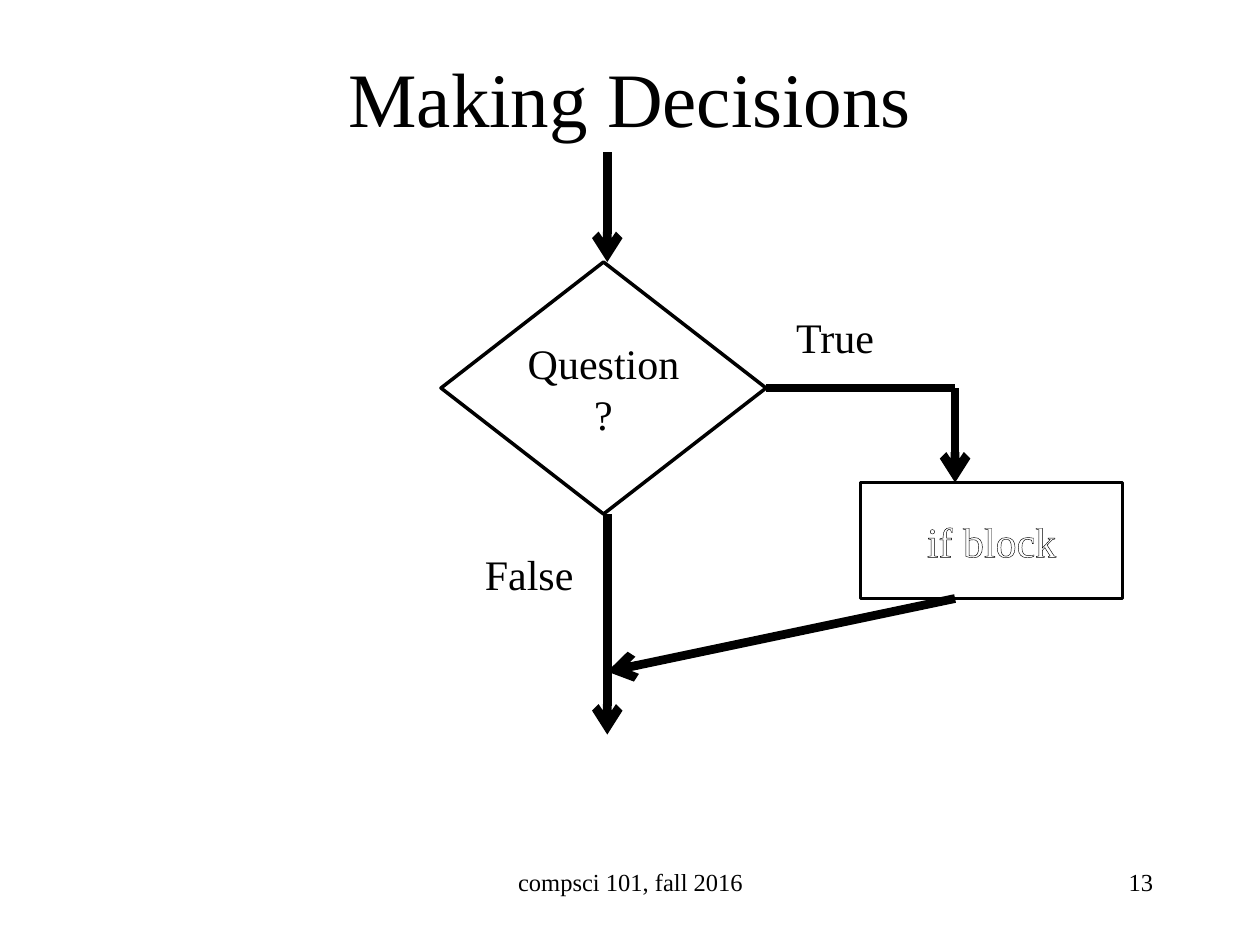
"""Build the Making Decisions flowchart slide."""
from lxml.etree import SubElement
from pptx import Presentation
from pptx.dml.color import RGBColor
from pptx.enum.shapes import MSO_CONNECTOR as CONN, MSO_SHAPE as SHAPE
from pptx.enum.text import MSO_ANCHOR as ANCHOR, PP_ALIGN as ALIGN
from pptx.oxml import parse_xml
from pptx.oxml.ns import nsdecls, qn
from pptx.util import Inches, Pt


def color(value):
    """Turn a hex string into a colour."""
    return RGBColor.from_string(value)


def write(s, text, size, align, fill="000000", wrap=True, anchor=ANCHOR.TOP):
    """Put one formatted paragraph into a shape."""
    tf = s.text_frame
    tf.word_wrap = wrap
    tf.vertical_anchor = anchor
    p = tf.paragraphs[0]
    p.alignment = align
    p.font.name = "Times New Roman"
    p.font.size = Pt(size)
    p.font.color.rgb = color(fill)
    r = p.add_run()
    r.text = text
    return r


prs = Presentation()
prs.slide_width, prs.slide_height = Inches(10), Inches(7.5)
slide = prs.slides.add_slide(prs.slide_layouts[6])

texts = [
    ("Making Decisions", 0.75, 0.33, 8.5, 0.88, 44, ALIGN.CENTER, True, ANCHOR.MIDDLE),
    ("True", 6.22, 2.42, 0.82, 0.51, 24, ALIGN.LEFT, False, ANCHOR.TOP),
    ("False", 3.75, 4.3, 0.91, 0.51, 24, ALIGN.LEFT, False, ANCHOR.TOP),
    ("compsci 101, fall 2016", 3.42, 6.83, 3.17, 0.5, 14, ALIGN.CENTER, True, ANCHOR.TOP),
    ("13", 7.17, 6.83, 2.08, 0.5, 14, ALIGN.RIGHT, True, ANCHOR.TOP),
]
for text, x, y, w, h, size, align, wrap, anchor in texts:
    s = slide.shapes.add_textbox(Inches(x), Inches(y), Inches(w), Inches(h))
    write(s, text, size, align, wrap=wrap, anchor=anchor)

question = slide.shapes.add_shape(
    SHAPE.DIAMOND, Inches(3.5), Inches(2.08), Inches(2.58), Inches(2))
block = slide.shapes.add_shape(
    SHAPE.RECTANGLE, Inches(6.83), Inches(3.83), Inches(2.08), Inches(0.92))
for s in (question, block):
    s.shadow.inherit = False
    s.fill.background()
    s.line.color.rgb = color("000000")
    s.line.width = Pt(2)

question.text_frame.margin_left = question.text_frame.margin_right = 0
write(question, "Question?", 24, ALIGN.CENTER, anchor=ANCHOR.MIDDLE)
r = write(block, "if block", 24, ALIGN.CENTER, "FFFFFF", anchor=ANCHOR.MIDDLE)
r.font.color.rgb = color("FFFFFF")
r.font._element.insert(0, parse_xml(
    f'<a:ln {nsdecls("a")} w="9525"><a:solidFill>'
    '<a:srgbClr val="000000"/></a:solidFill></a:ln>'))

main_x, branch_x = 4.82, 7.58
lines = [
    (main_x, 1.21, main_x, 2.08, True),
    (6.08, 3.08, branch_x, 3.08, False),
    (branch_x, 3.08, branch_x, 3.83, True),
    (main_x, 4.08, main_x, 5.83, True),
    (branch_x, 4.75, main_x, 5.33, True),
]
for x1, y1, x2, y2, arrow in lines:
    s = slide.shapes.add_connector(
        CONN.STRAIGHT, Inches(x1), Inches(y1), Inches(x2), Inches(y2))
    s.line.color.rgb = color("000000")
    s.line.width = Pt(5)
    if arrow:
        SubElement(s.line._get_or_add_ln(), qn("a:tailEnd"), type="arrow")
    else:
        s.begin_connect(question, 3)
    SubElement(s._element.spPr, qn("a:effectLst"))

prs.save("out.pptx")
